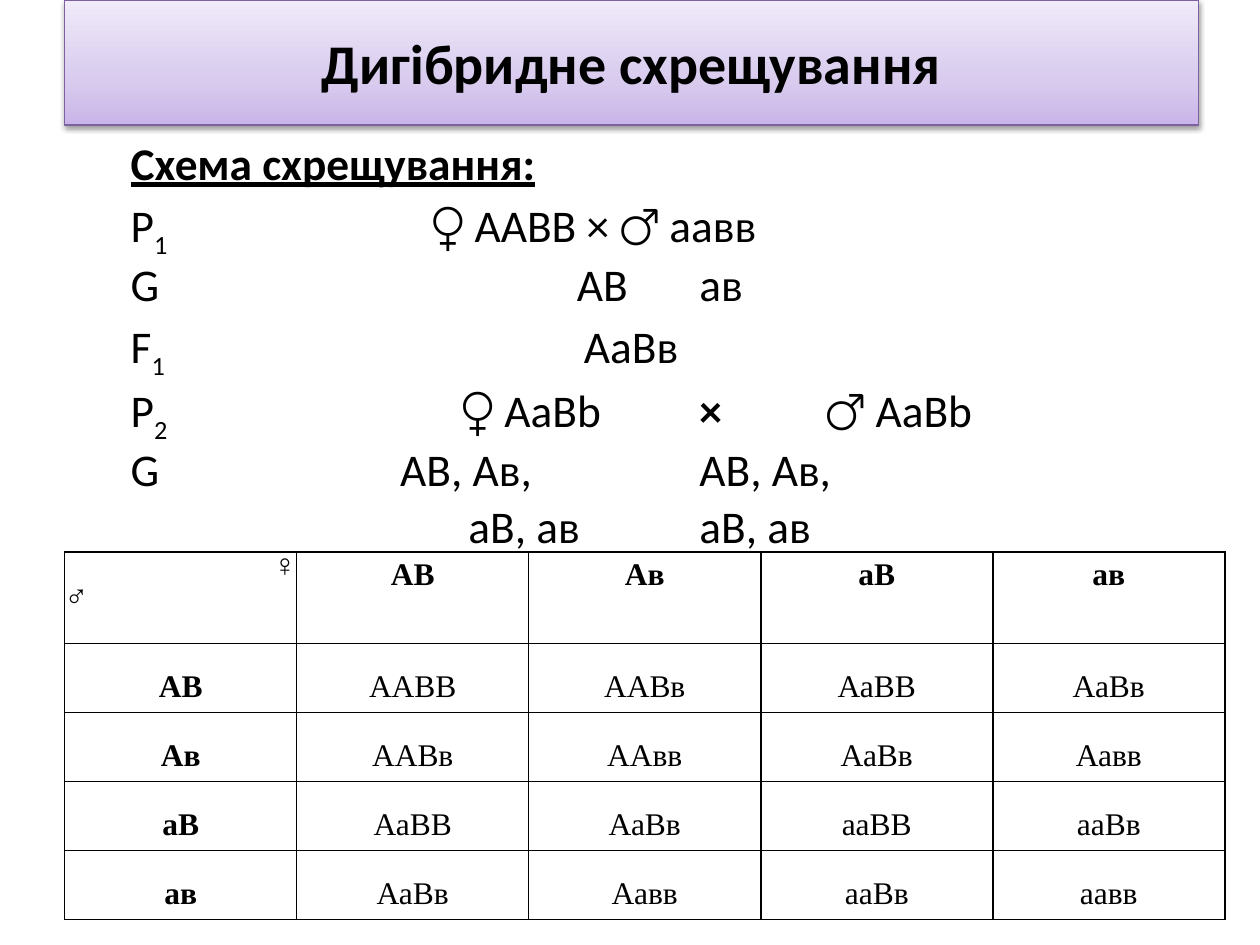
from lxml.etree import SubElement
from pptx import Presentation
from pptx.dml.color import RGBColor
from pptx.enum.shapes import MSO_SHAPE
from pptx.enum.text import MSO_ANCHOR, PP_ALIGN
from pptx.oxml import parse_xml
from pptx.oxml.ns import nsdecls, qn
from pptx.util import Pt

BLACK = RGBColor(0, 0, 0)
PURPLE = RGBColor(0x7D, 0x60, 0xA0)
SHADES = ((0, RGBColor(0xC9, 0xB5, 0xE8)), (35, RGBColor(0xD8, 0xCB, 0xEE)),
          (100, RGBColor(0xF0, 0xEA, 0xF9)))
HEAD = {"name": "Calibri", "size": Pt(32), "bold": True}
BODY = {"name": "Calibri", "size": Pt(25.9)}
GRID = {"name": "Times New Roman", "size": Pt(18)}
BOLD = {"bold": True}
SUB = -25000
MID = 325

LINES = [
    ((), [("Схема схрещування:", {"bold": True, "underline": True}, 0)]),
    ((172,), [("Р", {}, 0), ("1", {}, SUB), ("\t♀ ААВВ × ♂ аавв", {}, 0)]),
    ((255, MID), [("G\tАВ\tав", {}, 0)]),
    ((259,), [("F", {}, 0), ("1", {}, SUB), ("\tАаВв", {}, 0)]),
    ((189, MID, 397), [("Р", {}, 0), ("2", {}, SUB), ("\t♀ АaВb\t", {}, 0),
                       ("×\t", BOLD, 0), ("♂ АaВb", {}, 0)]),
    ((154, MID), [("G\tАВ, Ав,\tАВ, Ав,", {}, 0)]),
    ((193, MID), [("\tаВ, ав\tаВ, ав", {}, 0)]),
]
GAMETES = ["АВ", "Ав", "аВ", "ав"]
CROSS = [
    ["ААВВ", "ААВв", "АаВВ", "АаВв"],
    ["ААВв", "ААвв", "АаВв", "Аавв"],
    ["АаВВ", "АаВв", "ааВВ", "ааВв"],
    ["АаВв", "Аавв", "ааВв", "аавв"],
]


def style(item, form):
    for key, value in form.items():
        setattr(item, key, value)


def add_run(para, text, form, base=0):
    run = para.add_run()
    run.text = text
    style(run.font, form)
    run.font.color.rgb = BLACK
    if base:
        run.font._element.set("baseline", str(base)) if hasattr(run.font, "_element") \
            else run._r.get_or_add_rPr().set("baseline", str(base))


def add_title(slide, text):
    bar = slide.shapes.add_shape(MSO_SHAPE.RECTANGLE, Pt(37), 0, Pt(648), Pt(71.5))
    bar.line.color.rgb = PURPLE
    bar.line.width = Pt(0.75)
    stops = "".join(f'<a:gs pos="{pos * 1000}"><a:srgbClr val="{tone}"/></a:gs>'
                    for pos, tone in SHADES)
    props = bar._element.spPr
    props.find(qn("a:prstGeom")).addnext(parse_xml(
        f'<a:gradFill {nsdecls("a")}><a:gsLst>{stops}</a:gsLst>'
        '<a:lin ang="16200000" scaled="0"/></a:gradFill>'))
    props.append(parse_xml(
        f'<a:effectLst {nsdecls("a")}><a:outerShdw blurRad="{Pt(3.1)}" dist="{Pt(1.6)}" '
        f'dir="5400000" rotWithShape="0"><a:srgbClr val="{BLACK}">'
        '<a:alpha val="38000"/></a:srgbClr></a:outerShdw></a:effectLst>'))
    frame = bar.text_frame
    frame.vertical_anchor = MSO_ANCHOR.MIDDLE
    para = frame.paragraphs[0]
    para.alignment = PP_ALIGN.CENTER
    add_run(para, text, HEAD)


def add_tabs(para, tabs):
    stops = SubElement(para._p.get_or_add_pPr(), qn("a:tabLst"))
    for pos in tabs:
        SubElement(stops, qn("a:tab"), pos=str(Pt(pos)), algn="l")


def add_scheme(slide):
    box = slide.shapes.add_textbox(Pt(25), Pt(77), Pt(680), Pt(249))
    frame = box.text_frame
    style(frame, {"word_wrap": True, "margin_left": Pt(49.7)})
    for spot, (tabs, runs) in enumerate(LINES):
        para = frame.add_paragraph() if spot else frame.paragraphs[0]
        style(para, {"line_spacing": 0.9, "space_before": Pt(4.7)})
        if tabs:
            add_tabs(para, tabs)
        for text, form, base in runs:
            add_run(para, text, BODY | form, base)


def add_edges(cell):
    props = cell._tc.get_or_add_tcPr()
    for spot, side in enumerate(("lnL", "lnR", "lnT", "lnB")):
        props.insert(spot, parse_xml(
            f'<a:{side} {nsdecls("a")} w="{Pt(1)}"><a:solidFill>'
            f'<a:srgbClr val="{BLACK}"/></a:solidFill></a:{side}>'))


def fill_cell(cell, lines, space, top=0, bold=False):
    cell.fill.background()
    style(cell, {"margin_left": 0, "margin_right": 0, "margin_bottom": 0,
                 "margin_top": Pt(top)})
    add_edges(cell)
    for spot, (text, align) in enumerate(lines):
        frame = cell.text_frame
        para = frame.add_paragraph() if spot else frame.paragraphs[0]
        style(para, {"alignment": align, "line_spacing": space})
        add_run(para, text, GRID | {"bold": bold})


def add_grid(slide):
    size = len(GAMETES) + 1
    frame = slide.shapes.add_table(size, size, Pt(37), Pt(315.4), Pt(663), Pt(210))
    table = frame.table
    style(table, {"first_row": False, "horz_banding": False})
    for col in table.columns:
        col.width = Pt(132.6)
    for spot, row in enumerate(table.rows):
        row.height = Pt(39.4 if spot else 52.4)
    fill_cell(table.cell(0, 0), [("♀", PP_ALIGN.RIGHT), ("♂", PP_ALIGN.LEFT)], Pt(17.8))
    for col, name in enumerate(GAMETES, 1):
        fill_cell(table.cell(0, col), [(name, PP_ALIGN.CENTER)], 1.15, bold=True)
    for row, (name, kids) in enumerate(zip(GAMETES, CROSS), 1):
        for col, text in enumerate([name, *kids]):
            fill_cell(table.cell(row, col), [(text, PP_ALIGN.CENTER)], Pt(17.4),
                      top=17.4, bold=col == 0)


def main():
    deck = Presentation()
    style(deck, {"slide_width": Pt(720), "slide_height": Pt(540)})
    slide = deck.slides.add_slide(deck.slide_layouts[6])
    add_title(slide, "Дигібридне схрещування")
    add_scheme(slide)
    add_grid(slide)
    deck.save("out.pptx")


if __name__ == "__main__":
    main()
